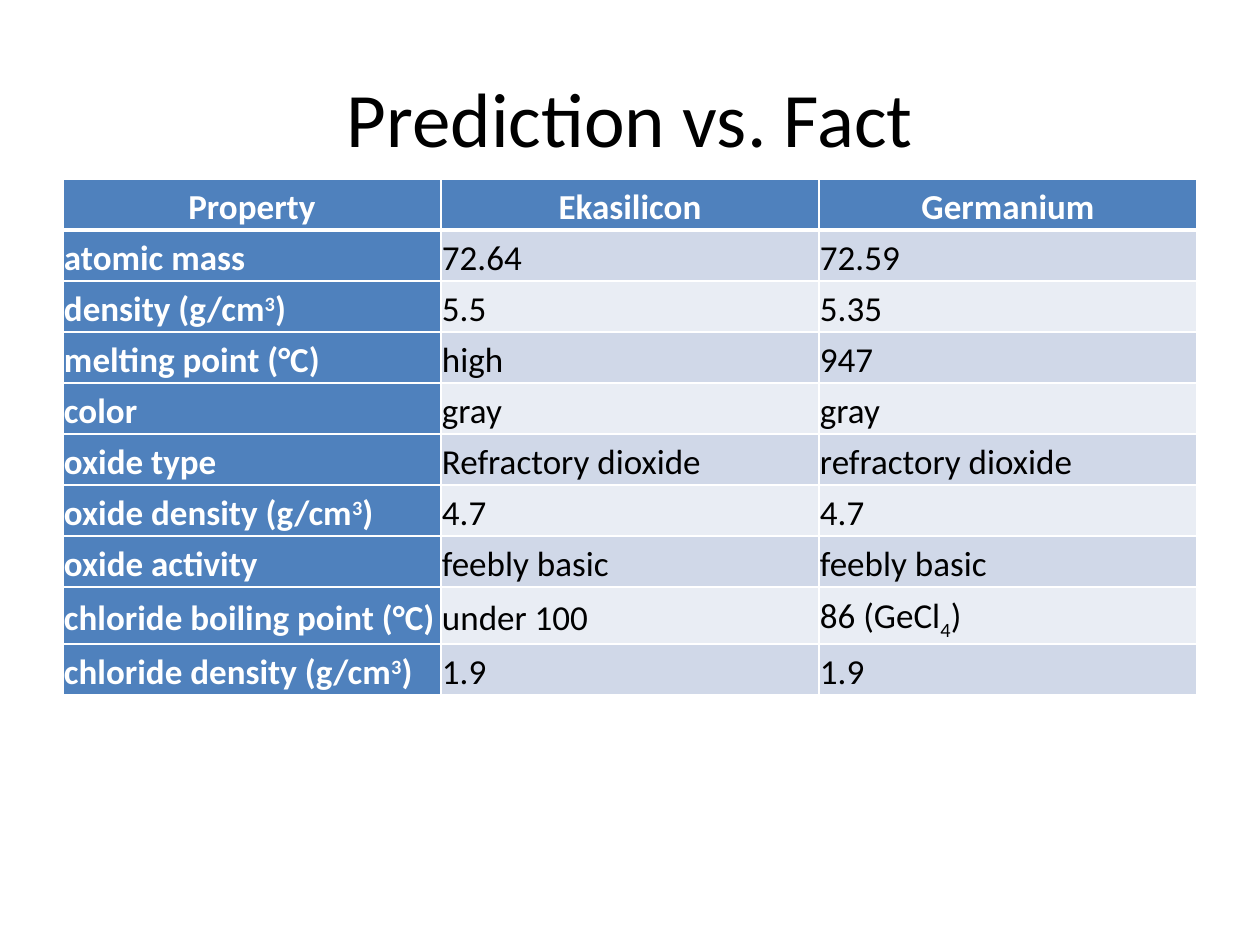
from dataclasses import dataclass

from lxml import etree
from pptx import Presentation
from pptx import util as u
from pptx.dml.color import RGBColor
from pptx.enum import text
from pptx.oxml import ns


@dataclass(frozen=True)
class Theme:
    font: str = "Calibri"
    title: int = 44
    body: int = 20
    ink: str = "000000"
    paper: str = "FFFFFF"
    head: str = "4F81BD"
    bands: tuple = ("D0D8E8", "E9EDF4")
    thin: int = 1
    thick: int = 3


THEME = Theme()
SHIFT = {"^": 30000, "_": -25000}
ROWS = [
    ("Property", "Ekasilicon", "Germanium"),
    ("atomic mass", "72.64", "72.59"),
    ("density (g/cm^3)", "5.5", "5.35"),
    ("melting point (°C)", "high", "947"),
    ("color", "gray", "gray"),
    ("oxide type", "Refractory dioxide", "refractory dioxide"),
    ("oxide density (g/cm^3)", "4.7", "4.7"),
    ("oxide activity", "feebly basic", "feebly basic"),
    ("chloride boiling point (°C)", "under 100", "86 (GeCl_4)"),
    ("chloride density (g/cm^3)", "1.9", "1.9"),
]


def px(n):
    return u.Inches(n / 126)


def style(para, size, color, bold=False):
    for run in para.runs:
        font = run.font
        font.name, font.size, font.bold = THEME.font, u.Pt(size), bold
        font.color.rgb = RGBColor.from_string(color)


def write(para, words):
    """Write words; the character after ^ is raised, after _ lowered."""
    mark = next((m for m in SHIFT if m in words), None)
    if mark is None:
        para.text = words
        return
    start, rest = words.split(mark)
    for part in (start, rest[0], rest[1:]):
        para.add_run().text = part
    para.runs[1].font._element.set("baseline", str(SHIFT[mark]))


def edge(cell, side, width):
    props = cell._tc.get_or_add_tcPr()
    line = etree.SubElement(props, ns.qn(f"a:ln{side}"), w=str(u.Pt(width)))
    fill = etree.SubElement(line, ns.qn("a:solidFill"))
    etree.SubElement(fill, ns.qn("a:srgbClr"), val=THEME.paper)


def add_title(slide, box, words):
    frame = slide.shapes.add_textbox(*map(px, box)).text_frame
    frame.word_wrap = True
    frame.vertical_anchor = text.MSO_ANCHOR.MIDDLE
    frame.text = words
    para = frame.paragraphs[0]
    para.alignment = text.PP_ALIGN.CENTER
    style(para, THEME.title, THEME.ink)


def fill_cell(cell, words, row, col):
    top, strong = row == 0, row == 0 or col == 0
    cell.margin_left = cell.margin_right = px(1)
    cell.margin_top = cell.margin_bottom = px(1)
    cell.vertical_anchor = text.MSO_ANCHOR.MIDDLE
    para = cell.text_frame.paragraphs[0]
    write(para, words)
    para.line_spacing = 1.15
    para.alignment = text.PP_ALIGN.CENTER if top else text.PP_ALIGN.LEFT
    style(para, THEME.body, THEME.paper if strong else THEME.ink, strong)
    heavy = {0: "B", 1: "T"}.get(row)
    for side in "LRTB":
        edge(cell, side, THEME.thick if side == heavy else THEME.thin)
    cell.fill.solid()
    color = THEME.head if strong else THEME.bands[(row - 1) % 2]
    cell.fill.fore_color.rgb = RGBColor.from_string(color)


def add_grid(slide, box, rows):
    shape = slide.shapes.add_table(len(rows), len(rows[0]), *map(px, box))
    grid = shape.table
    for r, row in enumerate(rows):
        for c, words in enumerate(row):
            fill_cell(grid.cell(r, c), words, r, c)


def main():
    deck = Presentation()
    deck.slide_width, deck.slide_height = px(1260), px(945)
    slide = deck.slides.add_slide(deck.slide_layouts[6])
    add_title(slide, (63, 38, 1134, 157), "Prediction vs. Fact")
    add_grid(slide, (63, 179, 1134, 510), ROWS)
    deck.save("out.pptx")


if __name__ == "__main__":
    main()
